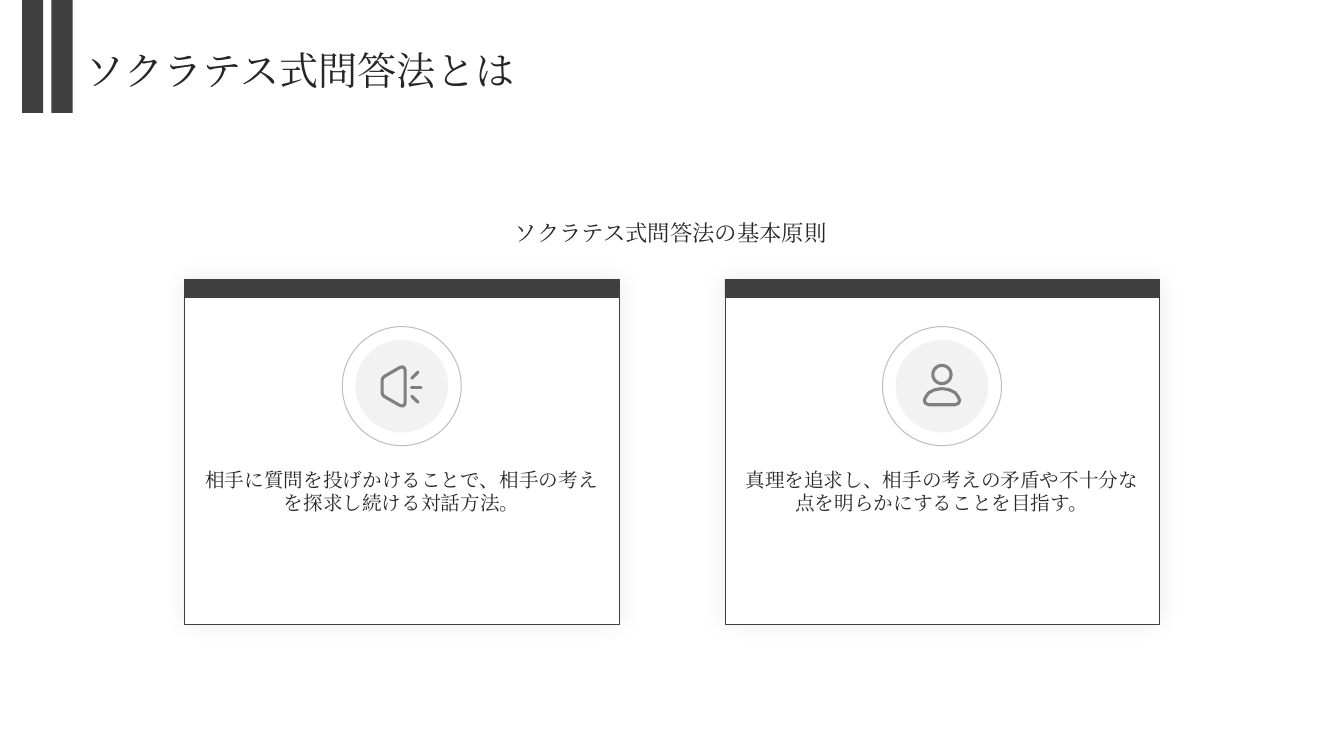
"""Build the slide on the Socratic method with two icon cards."""
from math import cos, pi, sin

from lxml import etree
from pptx import Presentation
from pptx.dml.color import RGBColor
from pptx.enum.shapes import MSO_SHAPE
from pptx.enum.text import MSO_ANCHOR, MSO_AUTO_SIZE, PP_ALIGN
from pptx.oxml import parse_xml
from pptx.oxml.ns import nsdecls, qn
from pptx.util import Pt

RECT, OVAL = MSO_SHAPE.RECTANGLE, MSO_SHAPE.OVAL
TOP, MIDDLE, BOTTOM = MSO_ANCHOR.TOP, MSO_ANCHOR.MIDDLE, MSO_ANCHOR.BOTTOM
LEFT, CENTER = PP_ALIGN.LEFT, PP_ALIGN.CENTER
NO_FIT = MSO_AUTO_SIZE.NONE

DARK = RGBColor(0x3F, 0x3F, 0x3F)
INK = RGBColor(0x26, 0x26, 0x26)
GRAY = RGBColor(0x80, 0x80, 0x80)
RING = RGBColor(0xBF, 0xBF, 0xBF)
PALE = RGBColor(0xF2, 0xF2, 0xF2)
WHITE = RGBColor(0xFF, 0xFF, 0xFF)
FONT = "Cambria"

TITLE = "ソクラテス式問答法とは"
HEAD = "ソクラテス式問答法の基本原則"
CARDS = [
    ("相手に質問を投げかけることで、相手の考えを探求し続ける対話方法。", "horn"),
    ("真理を追求し、相手の考えの矛盾や不十分な点を明らかにすることを目指す。", "person"),
]
CONE = [(-14, -6, 2.5), (2.5, -15.5, 5.5), (2.5, 16, 5.5), (-14, 6.5, 2.5)]
RAYS = [[(7.2, -5.6), (11.7, -10)], [(6.9, 0.8), (13.9, 0.8)], [(7.2, 7.2), (11.7, 11.6)]]
BODY = [(0, 1.8), (5, 2.5), (9.4, 4.7), (11.5, 7.6), (12.6, 10), (11.9, 12.2), (9.4, 13.3)]
FACE_Y, FACE_R = -8.3, 6.5

CARD_X, CARD_Y, CARD_W, CARD_H, STEP = 131.8, 199.4, 310.3, 246.2, 385.9
BAND_H, ICON_Y, PAD = 13, 275.8, 8.3
BARS = [15.8, 36.7]


def bend(corners):
    """Return the points of a polygon whose corners are rounded."""
    pts = []
    for i, (x, y, cut) in enumerate(corners):
        ends = []
        for nx, ny, _ in (corners[i - 1], corners[(i + 1) % len(corners)]):
            f = cut / ((nx - x) ** 2 + (ny - y) ** 2) ** 0.5
            ends.append((x + (nx - x) * f, y + (ny - y) * f))
        (ax, ay), (bx, by) = ends
        for t in (n / 8 for n in range(9)):
            u = 1 - t
            pts.append((u * u * ax + 2 * u * t * x + t * t * bx,
                        u * u * ay + 2 * u * t * y + t * t * by))
    return pts


def icon(kind):
    """Return the strokes of an icon as (points, closed) pairs."""
    if kind == "horn":
        return [(bend(CONE), True)] + [(ray, False) for ray in RAYS]
    turns = [2 * pi * n / 36 for n in range(36)]
    face = [(FACE_R * cos(a), FACE_Y + FACE_R * sin(a)) for a in turns]
    return [(face, True), (BODY + [(-x, y) for x, y in BODY[:0:-1]], True)]


def shape(slide, kind, x, y, w, h, fill=None, line=None, width=0.25):
    """Add a flat preset shape."""
    item = slide.shapes.add_shape(kind, Pt(x), Pt(y), Pt(w), Pt(h))
    item.shadow.inherit = False
    if fill is None:
        item.fill.background()
    else:
        item.fill.solid()
        item.fill.fore_color.rgb = fill
    if line is None:
        item.line.fill.background()
    else:
        item.line.color.rgb = line
        item.line.width = Pt(width)
    return item


def disc(slide, cx, size, **look):
    """Add a circle centred on the icon."""
    shape(slide, OVAL, cx - size / 2, ICON_Y - size / 2, size, size, **look)


def glow(item):
    """Give a card its soft shadow."""
    item._element.spPr.find(qn("a:effectLst")).append(parse_xml(
        f'<a:outerShdw {nsdecls("a")} blurRad="{Pt(15)}" dist="0" dir="0" algn="ctr" '
        f'rotWithShape="0"><a:srgbClr val="{DARK}"><a:alpha val="10000"/></a:srgbClr>'
        '</a:outerShdw>'))


def draw(slide, kind, cx, cy):
    """Draw an icon as one stroked freeform."""
    build = None
    for pts, closed in icon(kind):
        spots = [(Pt(cx + x), Pt(cy + y)) for x, y in pts]
        if build is None:
            build = slide.shapes.build_freeform(*spots[0], scale=1.0)
        else:
            build.move_to(*spots[0])
        build.add_line_segments(spots[1:], close=closed)
    item = build.convert_to_shape()
    item.shadow.inherit = False
    item.fill.background()
    item.line.color.rgb = GRAY
    item.line.width = Pt(2.2)
    ln = item._element.spPr.find(qn("a:ln"))
    ln.set("cap", "rnd")
    etree.SubElement(ln, qn("a:round"))


def write(item, text, size, align, anchor):
    """Set and format the text of a box or placeholder."""
    frame = item.text_frame
    frame.text = text
    frame.word_wrap = True
    frame.auto_size = NO_FIT
    frame.vertical_anchor = anchor
    frame.margin_left = frame.margin_right = frame.margin_top = frame.margin_bottom = 0
    para = frame.paragraphs[0]
    para.alignment = align
    font = para.runs[0].font
    font.name, font.size = FONT, Pt(size)
    font.color.rgb = INK
    east = etree.SubElement(para.runs[0]._r.get_or_add_rPr(), qn("a:ea"))
    east.set("typeface", FONT)


def label(slide, text, x, y, w, h, size, anchor):
    """Add a centred text box."""
    box = slide.shapes.add_textbox(Pt(x), Pt(y), Pt(w), Pt(h))
    write(box, text, size, CENTER, anchor)


def main():
    """Build and save the slide."""
    deck = Presentation()
    deck.slide_width, deck.slide_height = Pt(960), Pt(540)
    slide = deck.slides.add_slide(deck.slide_layouts[5])

    title = slide.shapes.title
    title.left, title.top, title.width, title.height = Pt(61.2), Pt(31.7), Pt(840.2), Pt(36.7)
    write(title, TITLE, 28, LEFT, MIDDLE)
    for x in BARS:
        shape(slide, RECT, x, 0, 15.1, 80.6, DARK)
    label(slide, HEAD, CARD_X, 88.6, 694.8, 87.1, 16, BOTTOM)

    for i, (text, kind) in enumerate(CARDS):
        x = CARD_X + i * STEP
        cx = x + CARD_W / 2
        glow(shape(slide, RECT, x, CARD_Y, CARD_W, CARD_H, WHITE, DARK))
        shape(slide, RECT, x, CARD_Y, CARD_W, BAND_H, DARK, DARK)
        disc(slide, cx, 85, line=RING, width=0.75)
        disc(slide, cx, 66.2, fill=PALE)
        draw(slide, kind, cx, ICON_Y)
        label(slide, text, x + PAD, 334.1, CARD_W - 2 * PAD, 90.7, 14, TOP)

    deck.save("out.pptx")


if __name__ == "__main__":
    main()
